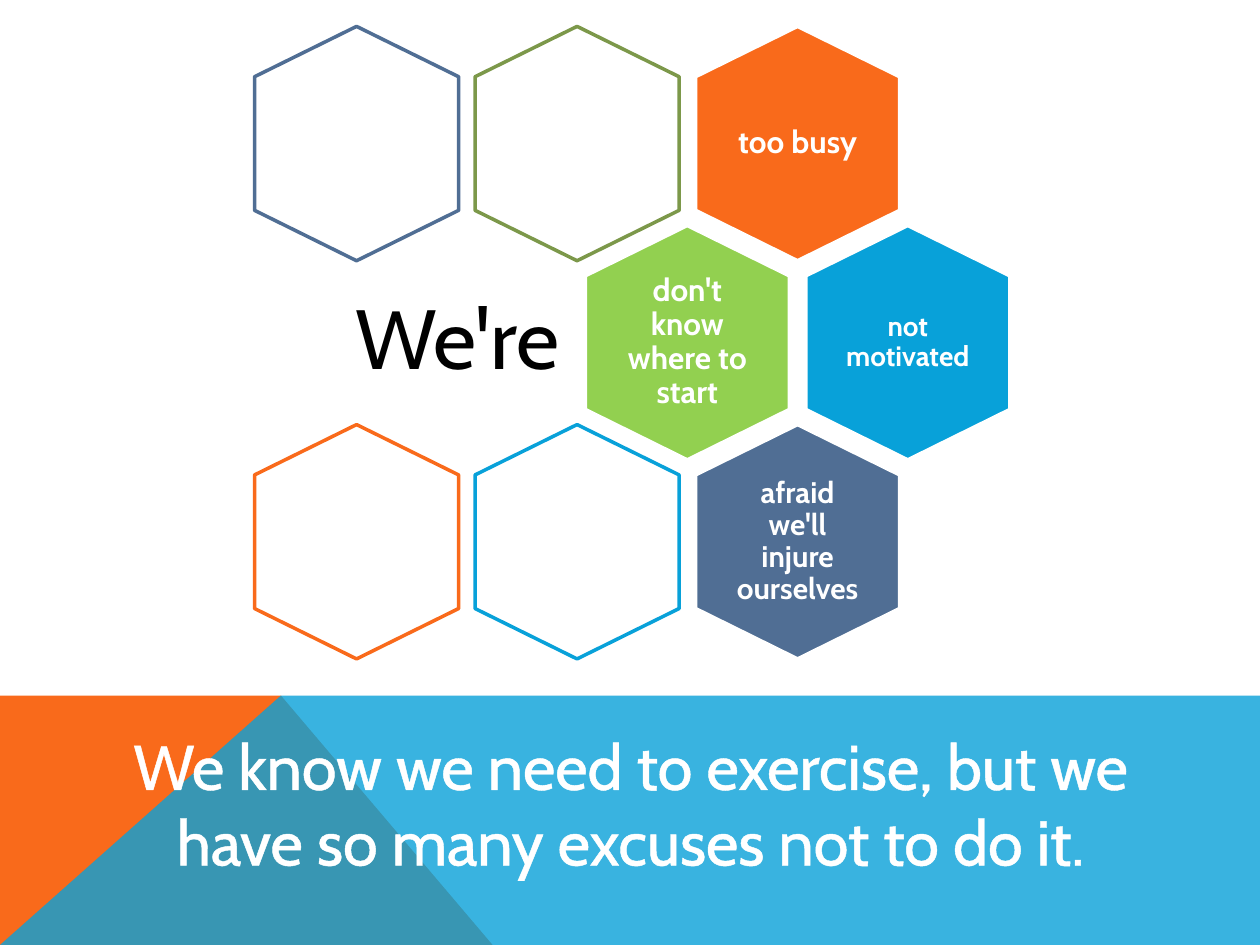
from lxml import etree
from pptx import Presentation
from pptx import util as u
from pptx.dml.color import RGBColor
from pptx.enum import text
from pptx.oxml import ns

THEME = {
    "font": "Cabin",
    "orange": "F96A1B", "blue": "08A1D9", "green": "92D050",
    "olive": "7C984A", "slate": "506E94", "white": "FFFFFF", "black": "000000",
    "label": 18, "label_mid": 17, "label_small": 16, "lead": 48, "message": 36,
    "outline": 2, "text_outline": 1.45,
}

SOLID_CELLS = [
    (2, 0, "orange", "too busy", "label"),
    (1.5, 1, "green", "don't know where to start", "label"),
    (2.5, 1, "blue", "not motivated", "label_small"),
    (2, 2, "slate", "afraid we'll injure ourselves", "label_mid"),
]
OUTLINE_CELLS = [(0, 0, "slate"), (1, 0, "olive"), (0, 2, "orange"), (1, 2, "blue")]
LEAD = "We're"
MESSAGE = "We know we need to exercise, but we have so many excuses not to do it."

PAGE_WIDTH, PAGE_HEIGHT = 10, 7.5
GRID_LEFT, GRID_TOP, COLUMN_STEP, ROW_STEP = 2.02, 0.21, 1.75, 1.58
CELL_WIDTH, CELL_HEIGHT, CELL_SHOULDER = 1.62, 1.86, 0.4
CELL_INSETS = (0.32, 0.36)
BAND_TOP, BAND_PEAK, WEDGE_RIGHT = 5.52, 2.23, 3.91


def color(name):
    return RGBColor.from_string(THEME[name])


def add_polygon(page, points, fill, line=None, alpha=None):
    corners = [(u.Inches(x), u.Inches(y)) for x, y in points]
    builder = page.shapes.build_freeform(*corners[0])
    builder.add_line_segments(corners[1:], close=True)
    shape = builder.convert_to_shape()
    shape.shadow.inherit = False
    shape.fill.solid()
    shape.fill.fore_color.rgb = color(fill)
    if line:
        shape.line.color.rgb = color(line)
        shape.line.width = u.Pt(THEME["outline"])
    else:
        shape.line.fill.background()
    if alpha:
        value = shape.fill._xPr.find(".//" + ns.qn("a:srgbClr"))
        etree.SubElement(value, ns.qn("a:alpha"), val=str(alpha * 1000))
    return shape


def add_hexagon(page, column, row, fill, line):
    left = GRID_LEFT + column * COLUMN_STEP
    top = GRID_TOP + row * ROW_STEP
    middle, right, bottom = left + CELL_WIDTH / 2, left + CELL_WIDTH, top + CELL_HEIGHT
    upper, lower = top + CELL_SHOULDER, bottom - CELL_SHOULDER
    points = [(middle, top), (right, upper), (right, lower),
              (middle, bottom), (left, lower), (left, upper)]
    return add_polygon(page, points, fill, line)


def write_text(shape, content, *, size, fill="white", bold=False, align="CENTER",
               anchor="MIDDLE", insets=(0.1, 0.05), spacing=1.0, outline=None):
    frame = shape.text_frame
    frame.word_wrap = True
    frame.vertical_anchor = getattr(text.MSO_ANCHOR, anchor)
    frame.margin_left = frame.margin_right = u.Inches(insets[0])
    frame.margin_top = frame.margin_bottom = u.Inches(insets[1])
    para = frame.paragraphs[0]
    para.alignment = getattr(text.PP_ALIGN, align)
    para.line_spacing = spacing
    span = para.add_run()
    span.text = content
    span.font.name = THEME["font"]
    span.font.size = u.Pt(THEME[size])
    span.font.bold = bold
    span.font.color.rgb = color(fill)
    if outline:
        properties = span.font._rPr
        line = etree.Element(ns.qn("a:ln"), w=str(u.Pt(THEME["text_outline"])))
        solid = etree.SubElement(line, ns.qn("a:solidFill"))
        etree.SubElement(solid, ns.qn("a:srgbClr"), val=THEME[outline])
        properties.insert(0, line)


def add_text(page, content, left, top, width, height, **style):
    box = page.shapes.add_textbox(*map(u.Inches, (left, top, width, height)))
    write_text(box, content, **style)


def main():
    deck = Presentation()
    deck.slide_width, deck.slide_height = u.Inches(PAGE_WIDTH), u.Inches(PAGE_HEIGHT)
    page = deck.slides.add_slide(deck.slide_layouts[6])

    peak = (BAND_PEAK, BAND_TOP)
    add_polygon(page, [(0, PAGE_HEIGHT), (0, BAND_TOP), peak, (WEDGE_RIGHT, PAGE_HEIGHT)], "orange")
    add_polygon(page, [(0, PAGE_HEIGHT), peak, (PAGE_WIDTH, BAND_TOP), (PAGE_WIDTH, PAGE_HEIGHT)],
                "blue", alpha=80)

    for column, row, fill, label, size in SOLID_CELLS:
        cell = add_hexagon(page, column, row, fill, "white")
        write_text(cell, label, size=size, bold=True, insets=CELL_INSETS, spacing=0.9)
    for column, row, line in OUTLINE_CELLS:
        add_hexagon(page, column, row, "white", line)

    add_text(page, LEAD, 2.56, 2.16, 2.01, 1.12, size="lead", fill="black",
             align="RIGHT", insets=(0.13, 0.13), spacing=0.9)
    add_text(page, MESSAGE, 0.61, 5.72, 8.79, 1.31, size="message",
             anchor="TOP", outline="white")
    deck.save("out.pptx")


if __name__ == "__main__":
    main()
